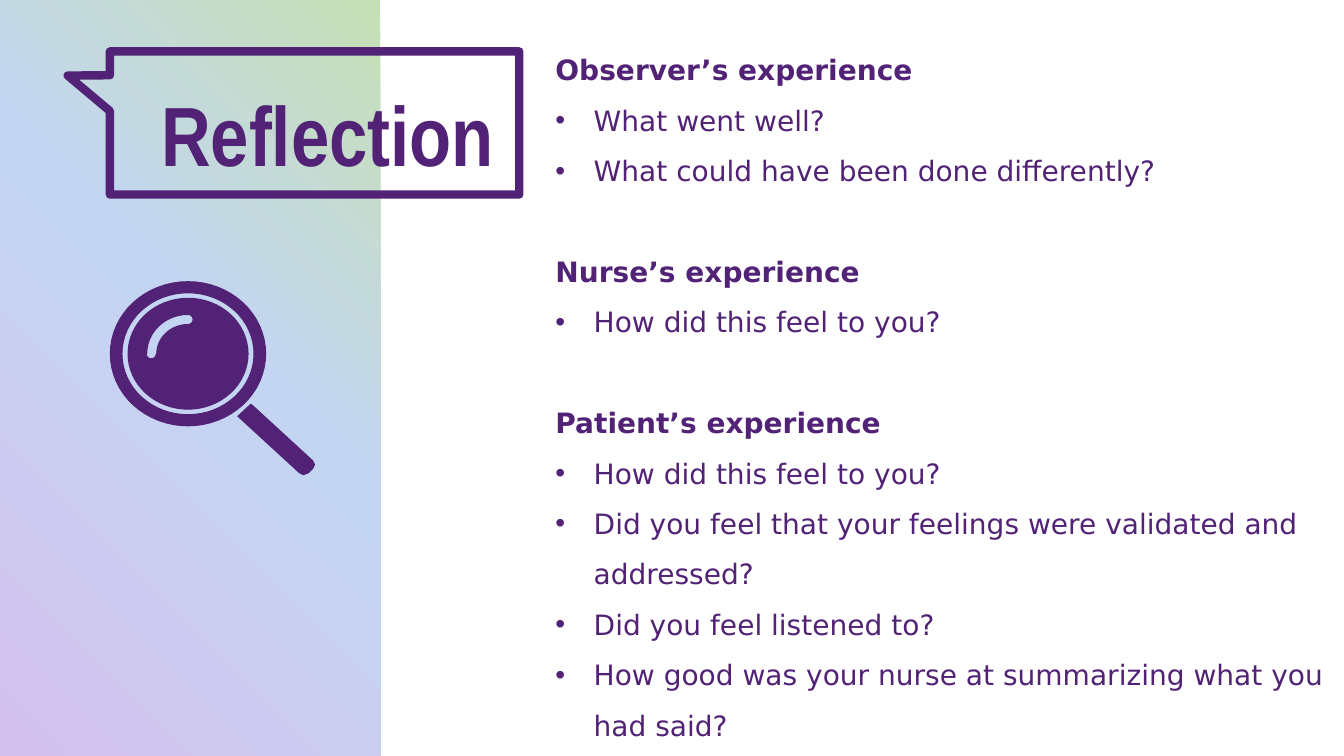
from dataclasses import dataclass
from math import cos, radians, sin

from pptx import Presentation, oxml, util as u
from pptx.dml.color import RGBColor
from pptx.enum import shapes, text
from pptx.oxml import ns

PX = 9144
COLOURS = {
    "ink": "512275",
    "lilac": "D3C1ED",
    "sky": "C4D5F3",
    "leaf": "C5E0B4",
}
PANEL_STOPS = [(0, "lilac"), (56, "sky"), (100, "leaf")]

Point = tuple[float, float]
Outline = list[Point]


@dataclass
class Box:
    left: int
    top: int
    width: int
    height: int

    def emu(self) -> list[int]:
        return [px(side) for side in (self.left, self.top, self.width, self.height)]


@dataclass
class Section:
    heading: str
    questions: list[str]


SECTIONS = [
    Section("Observer’s experience", [
        "What went well?",
        "What could have been done differently?",
    ]),
    Section("Nurse’s experience", ["How did this feel to you?"]),
    Section("Patient’s experience", [
        "How did this feel to you?",
        "Did you feel that your feelings were validated and addressed?",
        "Did you feel listened to?",
        "How good was your nurse at summarizing what you had said?",
    ]),
]


def px(length: float) -> int:
    return u.Emu(round(length * PX))


def colour(name: str) -> RGBColor:
    return RGBColor.from_string(COLOURS[name])


def apply_format(target, values: dict) -> None:
    for name, value in values.items():
        setattr(target, name, value)


def arc(centre: Point, radius: Point, start: int, end: int, steps: int = 12) -> Outline:
    angles = [radians(start + (end - start) * step / steps) for step in range(steps + 1)]
    return [(centre[0] + radius[0] * cos(angle), centre[1] + radius[1] * sin(angle))
            for angle in angles]


def ellipse(centre: Point, radius: Point) -> Outline:
    return arc(centre, radius, 0, 360, 64)


def draw_panel(slide, box: Box) -> None:
    shape = slide.shapes.add_shape(shapes.MSO_SHAPE.RECTANGLE, *box.emu())
    shape.shadow.inherit = False
    shape.line.fill.background()
    stops = "".join(
        f'<a:gs pos="{position * 1000}"><a:srgbClr val="{COLOURS[name]}"/></a:gs>'
        for position, name in PANEL_STOPS)
    gradient = oxml.parse_xml(
        f'<a:gradFill {ns.nsdecls("a")} rotWithShape="1"><a:gsLst>{stops}</a:gsLst>'
        '<a:path path="circle"><a:fillToRect t="100000" r="100000"/></a:path></a:gradFill>')
    shape.fill.background()
    properties = shape._element.spPr
    properties.replace(properties.find(ns.qn("a:noFill")), gradient)


def draw_callout(slide, box: Box) -> None:
    shape = slide.shapes.add_shape(shapes.MSO_SHAPE.RECTANGULAR_CALLOUT, *box.emu())
    shape.shadow.inherit = False
    shape.adjustments[0], shape.adjustments[1] = -0.603, -0.331
    shape.fill.background()
    shape.line.color.rgb = colour("ink")
    shape.line.width = u.Pt(6)


def draw_outlines(slide, outlines: list[Outline]):
    scaled = [[(px(x), px(y)) for x, y in outline] for outline in outlines]
    builder = slide.shapes.build_freeform(*scaled[0][0])
    builder.add_line_segments(scaled[0][1:])
    for outline in scaled[1:]:
        builder.move_to(*outline[0])
        builder.add_line_segments(outline[1:])
    shape = builder.convert_to_shape()
    shape.shadow.inherit = False
    shape.fill.solid()
    shape.fill.fore_color.rgb = colour("ink")
    shape.line.color.rgb = colour("ink")
    shape.line.width = u.Pt(0.75)
    return shape


def draw_magnifier(slide) -> None:
    centre = (186.5, 351)
    rim = [ellipse(centre, (77, 71.5)), ellipse(centre, (65.5, 60.5))]
    glint = (arc(centre, (41, 39), 270, 180)
             + arc((150, 351), (5, 5), 180, 0)
             + arc(centre, (31, 29), 180, 270)
             + arc((186.5, 317), (5, 5), 90, -90))
    lens = [ellipse(centre, (59.5, 55)), glint]
    handle = [[(249, 401), (236, 413), (297, 469), (301, 471), (306, 469),
               (310, 465), (312, 461), (310, 457)]]
    icon = [draw_outlines(slide, part) for part in (rim, lens, handle)]
    slide.shapes.add_group_shape(icon)


def add_text_frame(slide, box: Box):
    frame = slide.shapes.add_textbox(*box.emu()).text_frame
    frame.word_wrap = True
    frame.auto_size = text.MSO_AUTO_SIZE.SHAPE_TO_FIT_TEXT
    return frame


def write(paragraph, words: str, font: dict, spacing: dict) -> None:
    run = paragraph.add_run()
    run.text = words
    apply_format(run.font, font)
    run.font.color.rgb = colour("ink")
    apply_format(paragraph, spacing)


def indent(paragraph, margin: int, first_line: int) -> None:
    properties = paragraph._p.get_or_add_pPr()
    properties.set("marL", str(px(margin)))
    properties.set("indent", str(px(first_line)))


def add_bullet(paragraph) -> None:
    indent(paragraph, 38, -38)
    properties = paragraph._p.get_or_add_pPr()
    for tag, name, value in (("buFont", "typeface", "Arial"), ("buChar", "char", "•")):
        properties.append(oxml.parse_xml(f'<a:{tag} {ns.nsdecls("a")} {name}="{value}"/>'))


def draw_title(slide, box: Box) -> None:
    paragraph = add_text_frame(slide, box).paragraphs[0]
    font = {"name": "Arial Narrow", "size": u.Pt(60), "bold": True}
    write(paragraph, "Reflection", font, {"line_spacing": 1.2})
    indent(paragraph, 19, 0)


def draw_sections(slide, box: Box, sections: list[Section]) -> None:
    frame = add_text_frame(slide, box)
    font = {"name": "DejaVu Sans", "size": u.Pt(20)}
    for index, section in enumerate(sections):
        heading = frame.add_paragraph() if index else frame.paragraphs[0]
        gap = u.Pt(36 if index else 0)
        write(heading, section.heading, font | {"bold": True},
              {"line_spacing": 1.5, "space_before": gap})
        for question in section.questions:
            paragraph = frame.add_paragraph()
            write(paragraph, question, font | {"bold": False}, {"line_spacing": 1.5})
            add_bullet(paragraph)


def main() -> None:
    presentation = Presentation()
    apply_format(presentation, {"slide_width": px(1333), "slide_height": px(750)})
    slide = presentation.slides.add_slide(presentation.slide_layouts[6])
    draw_panel(slide, Box(0, 0, 377, 750))
    draw_callout(slide, Box(109, 51, 406, 142))
    draw_title(slide, Box(131, 57, 384, 131))
    draw_magnifier(slide)
    draw_sections(slide, Box(541, 31, 792, 717), SECTIONS)
    presentation.save("out.pptx")


if __name__ == "__main__":
    main()
